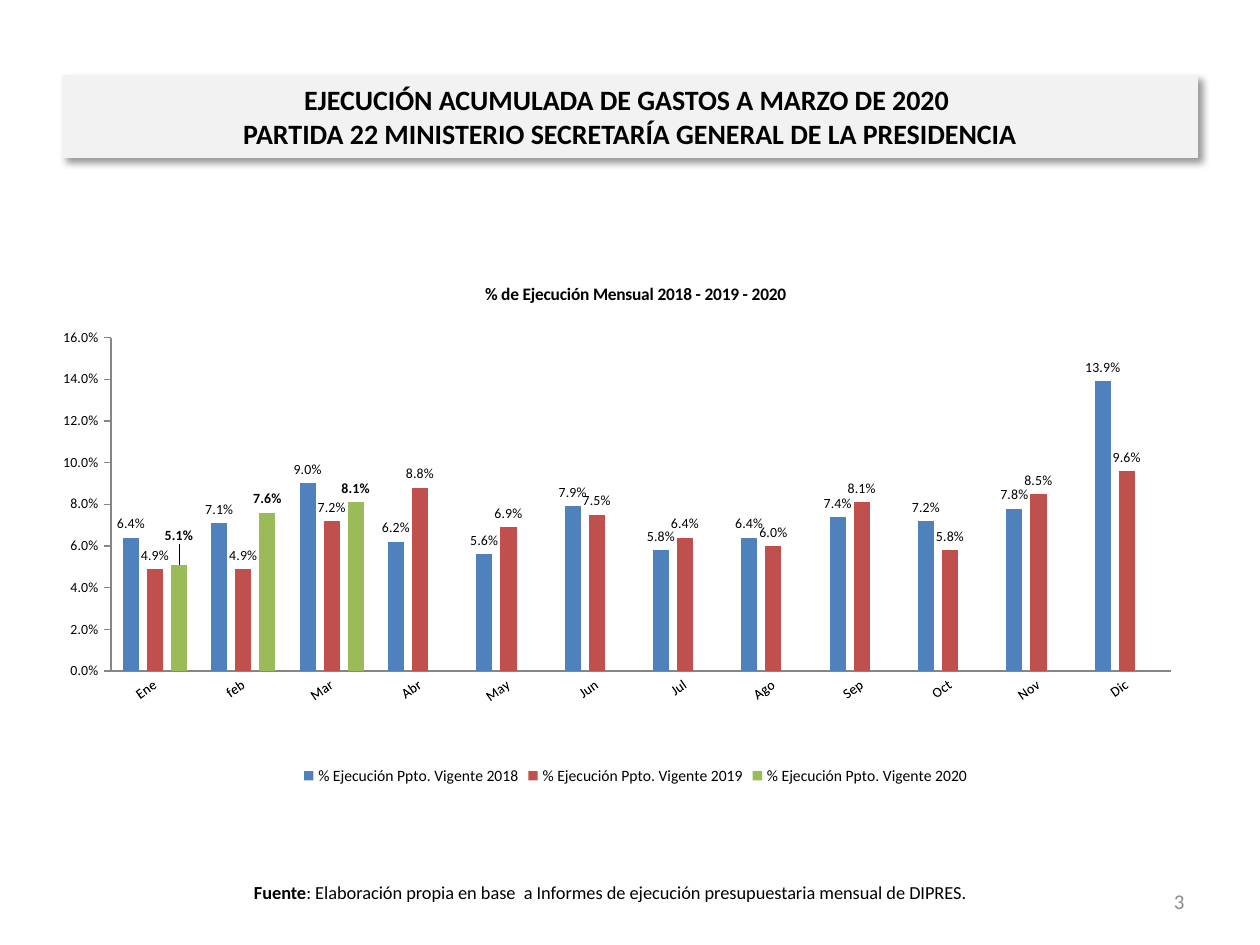
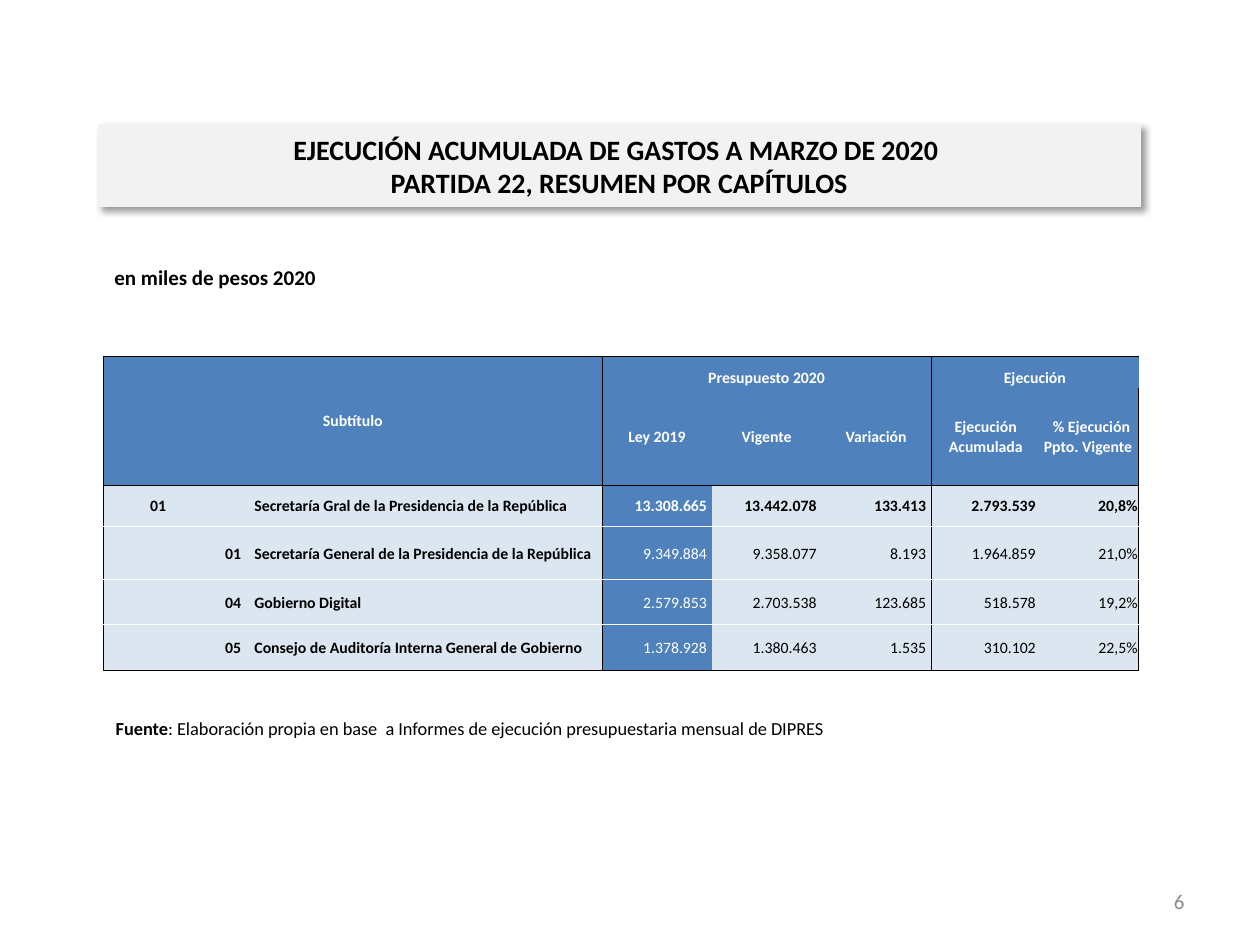
import pptx
import pptx.chart.data
import pptx.dml.color
import pptx.enum.chart
import pptx.enum.shapes
import pptx.enum.text
import pptx.oxml
import pptx.oxml.ns
import pptx.util
from lxml import etree

Inches = pptx.util.Inches
Pt = pptx.util.Pt
qn = pptx.oxml.ns.qn
ALIGN = pptx.enum.text.PP_ALIGN
ANCHOR = pptx.enum.text.MSO_ANCHOR

FONT = "Calibri"
BLACK, WHITE, GRAY = "000000", "FFFFFF", "8C8C8C"
BAND, AXIS = "F2F2F2", "868686"
BLUE, RED, GREEN = "4F81BD", "C0504D", "9BBB59"
PALE = "DCE6F1"
HEADING = "EJECUCIÓN ACUMULADA DE GASTOS A MARZO DE 2020 \v"
SOURCE = ": Elaboración propia en base  a Informes de ejecución presupuestaria mensual de DIPRES"
NO_STYLE = "{2D5ABB26-0587-4C30-8999-92F81FD0307C}"

MONTHS = ["Ene", "feb", "Mar", "Abr", "May", "Jun",
          "Jul", "Ago", "Sep", "Oct", "Nov", "Dic"]
EXECUTION = [
    (2018, BLUE, [6.4, 7.1, 9.0, 6.2, 5.6, 7.9, 5.8, 6.4, 7.4, 7.2, 7.8, 13.9]),
    (2019, RED, [4.9, 4.9, 7.2, 8.8, 6.9, 7.5, 6.4, 6.0, 8.1, 5.8, 8.5, 9.6]),
    (2020, GREEN, [5.1, 7.6, 8.1]),
]

COL_WIDTHS = [0.87, 0.32, 2.77, 0.87, 0.87, 0.87, 0.87, 0.78]
ROW_HEIGHTS = [0.25, 0.77, 0.33, 0.42, 0.36, 0.36]
BUDGET = [
    ["Subtítulo", "", "", "Presupuesto 2020", "", "", "Ejecución", ""],
    ["", "", "", "Ley 2019", "Vigente", "Variación",
     "Ejecución Acumulada", " % Ejecución Ppto. Vigente "],
    ["01", "", "Secretaría Gral de la Presidencia de la República",
     "13.308.665 ", "13.442.078 ", "133.413 ", "2.793.539 ", "20,8%"],
    ["", "01", "Secretaría General de la Presidencia de la República",
     "9.349.884 ", "9.358.077 ", "8.193 ", "1.964.859 ", "21,0%"],
    ["", "04", "Gobierno Digital",
     "2.579.853 ", "2.703.538 ", "123.685 ", "518.578 ", "19,2%"],
    ["", "05", "Consejo de Auditoría Interna General de Gobierno",
     "1.378.928 ", "1.380.463 ", "1.535 ", "310.102 ", "22,5%"],
]
HEADER_ROWS = 2
LAW_COL = 3
GROUP_STARTS = (0, 3, 6)
MERGES = [(0, 0, 1, 2), (0, 3, 0, 5), (0, 6, 0, 7)]


def rgb(color):
    """Return the colour object for a hex string."""
    return pptx.dml.color.RGBColor.from_string(color)


def style_font(font, size, color=BLACK, bold=False):
    """Set the shared typeface with a size, colour and weight."""
    font.name = FONT
    font.size = Pt(size)
    font.bold = bold
    font.color.rgb = rgb(color)


def add_title(slide, text, left, top, width):
    """Draw the shadowed title band with its two centred lines."""
    sp = slide.shapes.add_shape(pptx.enum.shapes.MSO_SHAPE.RECTANGLE,
                                Inches(left), Inches(top), Inches(width), Inches(0.65))
    sp.fill.solid()
    sp.fill.fore_color.rgb = rgb(BAND)
    sp.line.color.rgb = rgb(BAND)
    sp.line.width = Pt(0.75)
    sp.shadow.inherit = False
    effects = sp._element.spPr.find(qn("a:effectLst"))
    shadow = etree.SubElement(effects, qn("a:outerShdw"), blurRad=str(Pt(4)),
                              dist=str(Pt(3)), dir="2700000", algn="tl", rotWithShape="0")
    color = etree.SubElement(shadow, qn("a:srgbClr"), val=BLACK)
    etree.SubElement(color, qn("a:alpha"), val="40000")
    tf = sp.text_frame
    tf.word_wrap = True
    tf.auto_size = pptx.enum.text.MSO_AUTO_SIZE.SHAPE_TO_FIT_TEXT
    tf.vertical_anchor = ANCHOR.MIDDLE
    tf.margin_left = tf.margin_right = Inches(0.11)
    p = tf.paragraphs[0]
    p.text = HEADING + text
    p.alignment = ALIGN.CENTER
    for r in p.runs:
        style_font(r.font, 16, bold=True)


def add_text(slide, runs, box, size, color=BLACK, align=ALIGN.LEFT, anchor=ANCHOR.TOP):
    """Add one paragraph made of (text, bold) runs."""
    sp = slide.shapes.add_textbox(*(Inches(length) for length in box))
    tf = sp.text_frame
    tf.word_wrap = True
    tf.vertical_anchor = anchor
    p = tf.paragraphs[0]
    p.alignment = align
    for text, bold in runs:
        r = p.add_run()
        r.text = text
        style_font(r.font, size, color, bold)


def add_page_number(slide, number):
    """Add the gray page number at the bottom right."""
    add_text(slide, [(str(number), False)], (7.17, 6.95, 2.33, 0.4), 12, GRAY,
             ALIGN.RIGHT, ANCHOR.MIDDLE)


def add_source(slide, box, ending="", **placing):
    """Add the source line with its bold lead word."""
    add_text(slide, [("Fuente", True), (SOURCE + ending, False)], box, 10.5, **placing)


def manual_layout(**settings):
    """Build a chart layout element from its settings."""
    layout = etree.Element(qn("c:layout"))
    manual = etree.SubElement(layout, qn("c:manualLayout"))
    for name, value in settings.items():
        etree.SubElement(manual, qn("c:" + name), val=str(value))
    return layout


def style_axis(axis, tick):
    """Give an axis its line, ticks and label font."""
    axis.has_major_gridlines = False
    axis.major_tick_mark = tick
    axis.minor_tick_mark = pptx.enum.chart.XL_TICK_MARK.NONE
    axis.format.line.color.rgb = rgb(AXIS)
    style_font(axis.tick_labels.font, 8)


def style_series(series, color, bold):
    """Colour a series and label its columns."""
    series.format.fill.solid()
    series.format.fill.fore_color.rgb = rgb(color)
    series.invert_if_negative = False
    labels = series.data_labels
    labels.show_value = True
    labels.number_format = "0.0%"
    labels.number_format_is_linked = False
    labels.position = pptx.enum.chart.XL_LABEL_POSITION.OUTSIDE_END
    style_font(labels.font, 8, bold=bold)


def raise_label(point, shift):
    """Move the label of one column up by a share of the chart height."""
    style_font(point.data_label.font, 8, bold=True)
    point.data_label.position = pptx.enum.chart.XL_LABEL_POSITION.OUTSIDE_END
    label = point.data_label._get_or_add_dLbl()
    label.find(qn("c:idx")).addnext(manual_layout(x=0, y=-shift))


def add_execution_chart(slide):
    """Add the clustered columns of monthly execution by year."""
    data = pptx.chart.data.CategoryChartData(number_format="0.0%")
    data.categories = MONTHS
    for year, _, percents in EXECUTION:
        values = [round(percent / 100, 3) for percent in percents]
        data.add_series(f"% Ejecución Ppto. Vigente {year}",
                        values + [None] * (len(MONTHS) - len(values)))
    frame = slide.shapes.add_chart(pptx.enum.chart.XL_CHART_TYPE.COLUMN_CLUSTERED,
                                   Inches(0.5), Inches(2.08), Inches(9), Inches(4.19), data)
    chart = frame.chart
    style_font(chart.font, 10)
    chart.has_title = True
    tf = chart.chart_title.text_frame
    tf.text = "% de Ejecución Mensual 2018 - 2019 - 2020"
    style_font(tf.paragraphs[0].runs[0].font, 10, bold=True)
    chart.chart_title.include_in_layout = False
    chart.has_legend = True
    chart.legend.position = pptx.enum.chart.XL_LEGEND_POSITION.BOTTOM
    chart.legend.include_in_layout = False
    style_font(chart.legend.font, 9)

    ticks = pptx.enum.chart.XL_TICK_MARK
    style_axis(chart.category_axis, ticks.NONE)
    chart.category_axis._element.find(qn("c:txPr")).find(qn("a:bodyPr")).set("rot", "-2100000")
    axis = chart.value_axis
    style_axis(axis, ticks.OUTSIDE)
    axis.minimum_scale, axis.maximum_scale, axis.major_unit = 0, 0.16, 0.02
    axis.tick_labels.number_format = "0.0%"
    axis.tick_labels.number_format_is_linked = False

    plot = chart.plots[0]
    plot.vary_by_categories = False
    plot.gap_width, plot.overlap = 150, -49
    for series, (year, color, _) in zip(plot.series, EXECUTION):
        style_series(series, color, bold=year == 2020)
    raise_label(plot.series[2].points[0], 0.03)
    area = chart._chartSpace.find(".//" + qn("c:plotArea"))
    for old in area.findall(qn("c:layout")):
        area.remove(old)
    area.insert(0, manual_layout(layoutTarget="inner", xMode="edge", yMode="edge",
                                 x=0.033, y=0.143, w=0.944, h=0.632))


def cell_borders(row, col):
    """Return the border colours of a cell by side."""
    last_row, last_col = len(BUDGET) - 1, len(COL_WIDTHS) - 1
    borders = {}
    if col in GROUP_STARTS:
        borders["L"] = BLACK
    if col == last_col or col + 1 in GROUP_STARTS:
        borders["R"] = BLACK
    if row in (0, HEADER_ROWS):
        borders["T"] = BLACK
    elif row > HEADER_ROWS:
        borders["T"] = WHITE
    if row in (HEADER_ROWS - 1, last_row):
        borders["B"] = BLACK
    elif row >= HEADER_ROWS:
        borders["B"] = WHITE
    return borders


def set_borders(cell, borders):
    """Draw the sides of a cell that have a colour and hide the others."""
    props = cell._tc.get_or_add_tcPr()
    for place, side in enumerate("LRTB"):
        line = etree.Element(qn("a:ln" + side), w=str(Pt(0.5)))
        if side in borders:
            fill = etree.SubElement(line, qn("a:solidFill"))
            etree.SubElement(fill, qn("a:srgbClr"), val=borders[side])
        else:
            etree.SubElement(line, qn("a:noFill"))
        props.insert(place, line)


def fill_cell(cell, text, row, col):
    """Write and format one cell by its row and column."""
    header = row < HEADER_ROWS
    dark = header or col == LAW_COL
    cell.fill.solid()
    cell.fill.fore_color.rgb = rgb(BLUE if dark else PALE)
    cell.margin_left = cell.margin_right = cell.margin_top = Inches(0.01)
    cell.margin_bottom = 0
    cell.vertical_anchor = ANCHOR.BOTTOM if row == 0 and col > 0 else ANCHOR.MIDDLE
    p = cell.text_frame.paragraphs[0]
    p.text = text
    if header or col < 2:
        p.alignment = ALIGN.CENTER
    else:
        p.alignment = ALIGN.JUSTIFY if col == 2 else ALIGN.RIGHT
    for r in p.runs:
        style_font(r.font, 9, WHITE if dark else BLACK,
                   bold=row <= HEADER_ROWS or col < LAW_COL)
    if not text:
        etree.SubElement(p._p, qn("a:endParaRPr"), sz="900")
    set_borders(cell, cell_borders(row, col))


def add_budget_table(slide):
    """Add the budget summary by chapter."""
    frame = slide.shapes.add_table(len(ROW_HEIGHTS), len(COL_WIDTHS), Inches(0.82),
                                   Inches(2.83), Inches(sum(COL_WIDTHS)),
                                   Inches(sum(ROW_HEIGHTS)))
    table = frame.table
    table.first_row = table.horz_banding = False
    table._tbl.tblPr.find(qn("a:tableStyleId")).text = NO_STYLE
    for column, width in zip(table.columns, COL_WIDTHS):
        column.width = Inches(width)
    for row, height in zip(table.rows, ROW_HEIGHTS):
        row.height = Inches(height)
    for i, texts in enumerate(BUDGET):
        for j, text in enumerate(texts):
            fill_cell(table.cell(i, j), text, i, j)
    for top, left, bottom, right in MERGES:
        table.cell(top, left).merge(table.cell(bottom, right))


def main():
    """Build both slides and save the presentation."""
    prs = pptx.Presentation()
    prs.slide_width, prs.slide_height = Inches(10), Inches(7.5)
    blank = prs.slide_layouts[6]

    slide = prs.slides.add_slide(blank)
    add_title(slide, "PARTIDA 22 MINISTERIO SECRETARÍA GENERAL DE LA PRESIDENCIA", 0.5, 0.6, 9)
    add_page_number(slide, 3)
    add_source(slide, (1.46, 6.88, 6.77, 0.4), ".", align=ALIGN.CENTER, anchor=ANCHOR.MIDDLE)
    add_execution_chart(slide)

    slide = prs.slides.add_slide(blank)
    add_title(slide, "PARTIDA 22, RESUMEN POR CAPÍTULOS", 0.78, 0.99, 8.27)
    add_page_number(slide, 6)
    add_source(slide, (0.82, 5.64, 7.72, 0.4))
    add_text(slide, [("en miles de pesos 2020", True)], (0.81, 2.05, 8.19, 0.36), 12)
    add_budget_table(slide)
    prs.save("out.pptx")


if __name__ == "__main__":
    main()
